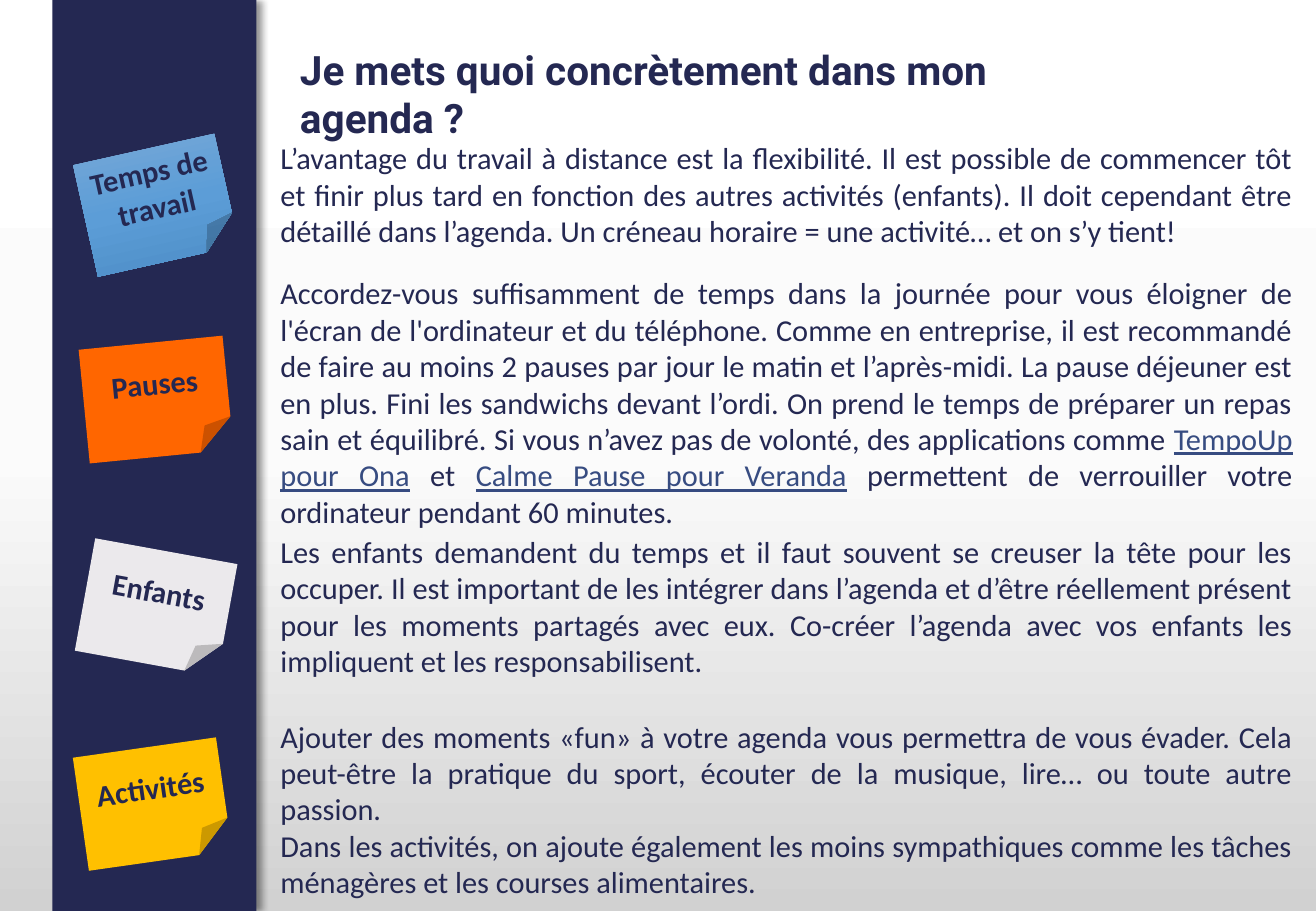
from copy import deepcopy

from lxml import etree
from pptx import Presentation
from pptx import util as u
from pptx.dml.color import RGBColor
from pptx.enum import shapes, text
from pptx.oxml import ns

Pt = u.Pt
NAVY = RGBColor(0x24, 0x28, 0x52)
LINK = RGBColor(0x37, 0x4C, 0x81)
ORANGE = RGBColor(0xFF, 0x66, 0x00)
GREY = RGBColor(0xEB, 0xE9, 0xEC)
YELLOW = RGBColor(0xFF, 0xC0, 0x00)
BLUES = [RGBColor(0x77, 0xA8, 0xD7), RGBColor(0x5C, 0x9D, 0xD7), RGBColor(0x4C, 0x8C, 0xC5)]
WHITES = [RGBColor(0xFF, 0xFF, 0xFF), RGBColor(0xFB, 0xFB, 0xFB), RGBColor(0xD1, 0xD1, 0xD1)]


def fill_gradient(fill, element, colours):
    """Fill from top to bottom with three evenly spaced colours."""
    fill.gradient()
    fill.gradient_angle = 270
    stops = next(element.iter(ns.qn("a:gsLst")))
    stops.insert(1, deepcopy(stops[0]))
    for stop, colour, position in zip(fill.gradient_stops, colours, (0, 0.5, 1)):
        stop.color.rgb = colour
        stop.position = position


def add_span(para, words, size=18, font="Calibri", colour=NAVY, bold=False):
    span = para.add_run()
    span.text = words
    span.font.name = font
    span.font.size = Pt(size)
    span.font.bold = bold
    span.font.color.rgb = colour
    span.font.underline = colour == LINK


deck = Presentation()
deck.slide_width, deck.slide_height = Pt(780), Pt(540)
page = deck.slides.add_slide(deck.slide_layouts[5])
fill_gradient(page.background.fill, page.element, WHITES)

# Side bar with its shadow
bar = page.shapes.add_shape(shapes.MSO_SHAPE.RECTANGLE, Pt(31), Pt(0), Pt(121), Pt(540))
bar.fill.solid()
bar.fill.fore_color.rgb = NAVY
bar.line.fill.background()
bar.shadow.inherit = False
effects = bar.element.spPr.find(ns.qn("a:effectLst"))
shadow = etree.SubElement(effects, ns.qn("a:outerShdw"), blurRad=str(Pt(4)), dist=str(Pt(3)),
                          dir="0", algn="l", rotWithShape="0")
black = etree.SubElement(shadow, ns.qn("a:srgbClr"), val="000000")
etree.SubElement(black, ns.qn("a:alpha"), val="40000")

# Title
title = page.shapes.title
title.left, title.top, title.width, title.height = Pt(170.6), Pt(23), Pt(515.5), Pt(36)
title.text_frame.word_wrap = True
title.text_frame.auto_size = text.MSO_AUTO_SIZE.NONE
title.text_frame.vertical_anchor = text.MSO_ANCHOR.TOP
para = title.text_frame.paragraphs[0]
para.alignment = text.PP_ALIGN.LEFT
add_span(para, "Je mets quoi concrètement dans mon agenda ?", 24, "Roboto", bold=True)

# Sticky notes: label, left, top, rotation, fill
notes = [
    ("Temps de travail", 49.7, 87.8, 347.4, BLUES),
    ("Pauses", 49.7, 203, 354.4, ORANGE),
    ("Enfants", 49.7, 326.2, 10.3, GREY),
    ("Activités", 47.5, 442.8, 351.9, YELLOW),
]
for label, left, top, rotation, paint in notes:
    note = page.shapes.add_shape(shapes.MSO_SHAPE.FOLDED_CORNER, Pt(left), Pt(top), Pt(85.7), Pt(67.7))
    fold = next(note.element.iter(ns.qn("a:avLst")))
    etree.SubElement(fold, ns.qn("a:gd"), name="adj", fmla="val 29100")
    note.rotation = rotation
    note.shadow.inherit = False
    note.line.fill.background()
    if paint is BLUES:
        fill_gradient(note.fill, note.element, paint)
    else:
        note.fill.solid()
        note.fill.fore_color.rgb = paint
    note.text_frame.word_wrap = True
    note.text_frame.vertical_anchor = text.MSO_ANCHOR.MIDDLE
    para = note.text_frame.paragraphs[0]
    para.alignment = text.PP_ALIGN.CENTER
    add_span(para, label, bold=True)

# Advice beside each note: top, height, paragraphs made of (words, colour)
advice = [
    (79.2, 72.7, [[(
        "L’avantage du travail à distance est la flexibilité. Il est possible de commencer tôt et finir "
        "plus tard en fonction des autres activités (enfants). Il doit cependant être détaillé dans "
        "l’agenda. Un créneau horaire = une activité… et on s’y tient!", NAVY)]]),
    (159.1, 159.8, [[
        ("Accordez-vous suffisamment de temps dans la journée pour vous éloigner de l'écran de "
         "l'ordinateur et du téléphone. Comme en entreprise, il est recommandé de faire au moins 2 pauses "
         "par jour le matin et l’après-midi. La pause déjeuner est en plus. Fini les sandwichs devant "
         "l’ordi. On prend le temps de préparer un repas sain et équilibré. Si vous n’avez pas de "
         "volonté, des applications comme ", NAVY),
        ("TempoUp pour Ona", LINK),
        (" et ", NAVY),
        ("Calme Pause pour Veranda", LINK),
        (" permettent de verrouiller votre ordinateur pendant 60 minutes.", NAVY)]]),
    (312.5, 94.3, [[(
        "Les enfants demandent du temps et il faut souvent se creuser la tête pour les occuper. Il est "
        "important de les intégrer dans l’agenda et d’être réellement présent pour les moments partagés "
        "avec eux. Co-créer l’agenda avec vos enfants les impliquent et les responsabilisent.", NAVY)]]),
    (421.9, 116.6, [
        [("Ajouter des moments «fun» à votre agenda vous permettra de vous évader. Cela peut-être la "
          "pratique du sport, écouter de la musique, lire… ou toute autre passion.", NAVY)],
        [("Dans les activités, on ajoute également les moins sympathiques comme les tâches ménagères et "
          "les courses alimentaires.", NAVY)]]),
]
for top, height, paragraphs in advice:
    box = page.shapes.add_textbox(Pt(159.1), Pt(top), Pt(614.2), Pt(height))
    frame = box.text_frame
    frame.word_wrap = True
    for index, spans in enumerate(paragraphs):
        para = frame.add_paragraph() if index else frame.paragraphs[0]
        para.alignment = text.PP_ALIGN.JUSTIFY
        for words, colour in spans:
            add_span(para, words, colour=colour)

deck.save("out.pptx")
